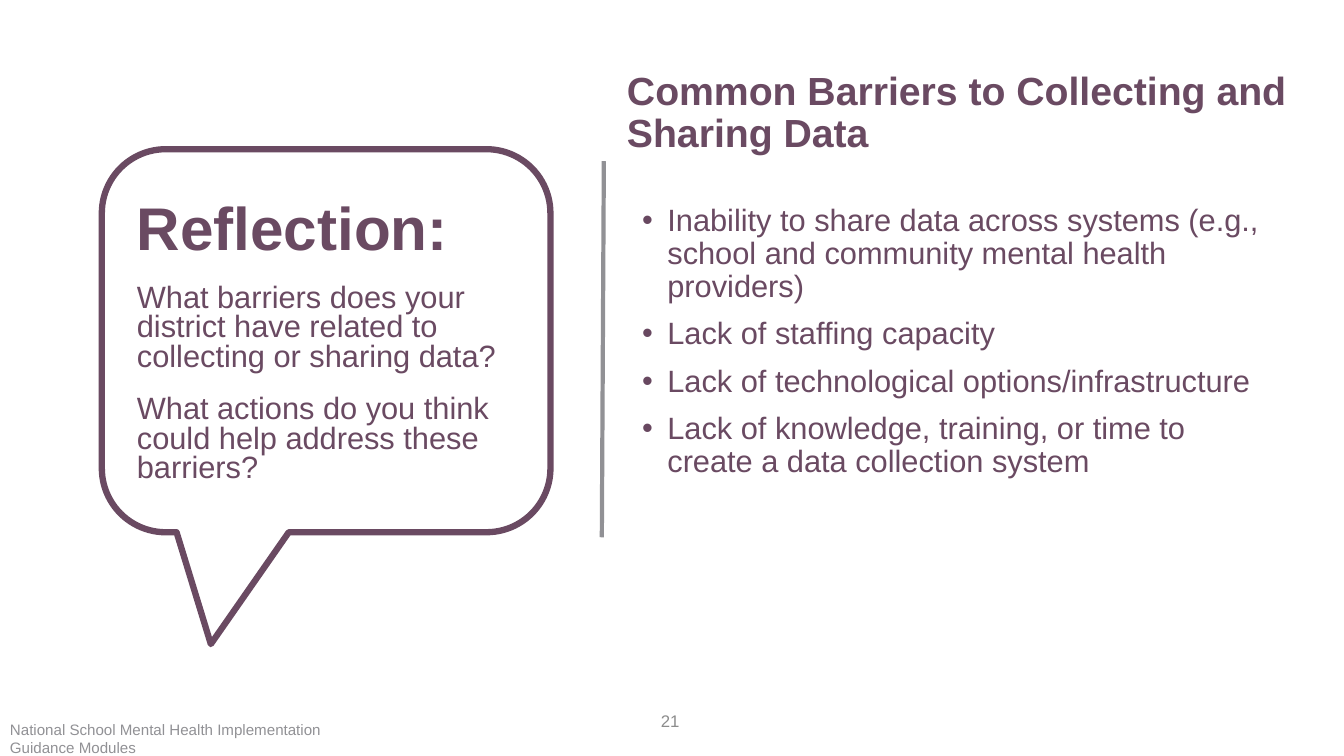
"""Build the slide on common barriers to collecting and sharing data."""
from lxml.etree import SubElement
from pptx import Presentation
from pptx.dml.color import RGBColor
from pptx.enum.shapes import MSO_CONNECTOR as Connector, MSO_SHAPE as Shape
from pptx.enum.text import MSO_ANCHOR as Anchor, MSO_AUTO_SIZE as AutoSize, PP_ALIGN as Align
from pptx.oxml.ns import qn
from pptx.util import Inches, Pt

PLUM = RGBColor(0x6A, 0x4A, 0x62)
BULLET = RGBColor(0x68, 0x48, 0x60)
GRAY = RGBColor(0x91, 0x91, 0x95)
PAGE_GRAY = RGBColor(0x8C, 0x8C, 0x8C)

presentation = Presentation()
presentation.slide_width = Inches(13.33)
presentation.slide_height = Inches(7.5)
slide = presentation.slides.add_slide(presentation.slide_layouts[1])
shapes = slide.shapes


def area(left, top, width, height):
    """Turn percentages of the slide into lengths."""
    across, down = presentation.slide_width / 100, presentation.slide_height / 100
    return [int(left * across), int(top * down), int(width * across), int(height * down)]


def write(shape, lines, color, anchor=Anchor.TOP, align=Align.LEFT, spacing=None, before=0, after=0):
    """Fill a shape with one paragraph for each (text, size, bold) line."""
    frame = shape.text_frame
    frame.word_wrap = True
    frame.auto_size = AutoSize.NONE
    frame.vertical_anchor = anchor
    for number, (text, size, bold) in enumerate(lines):
        paragraph = frame.add_paragraph() if number else frame.paragraphs[0]
        paragraph.alignment = align
        paragraph.line_spacing = spacing
        paragraph.space_before = Pt(before if number else 0)
        paragraph.space_after = Pt(after)
        run = paragraph.add_run()
        run.text = text
        run.font.name = "Arial"
        run.font.size = Pt(size)
        run.font.bold = bold
        run.font.color.rgb = color


title = shapes.title
title.left, title.top, title.width, title.height = area(45.9, 12.67, 51.53, 8.67)
write(title, [("Common Barriers to Collecting and Sharing Data", 28, True)],
      PLUM, anchor=Anchor.BOTTOM, spacing=0.9)

barriers = [
    "Inability to share data across systems (e.g., school and community mental health providers)",
    "Lack of staffing capacity",
    "Lack of technological options/infrastructure",
    "Lack of knowledge, training, or time to create a data collection system",
]
body = slide.placeholders[1]
body.left, body.top, body.width, body.height = area(47.03, 26.4, 47.55, 48.13)
write(body, [(barrier, 22, False) for barrier in barriers], PLUM, spacing=0.9, before=10)
for paragraph in body.text_frame.paragraphs:
    properties = paragraph._p.get_or_add_pPr()
    properties.set("marL", str(Inches(0.25)))
    properties.set("indent", str(-Inches(0.25)))
    bullet_color = SubElement(properties, qn("a:buClr"))
    SubElement(bullet_color, qn("a:srgbClr"), val=str(BULLET))
    SubElement(properties, qn("a:buFont"), typeface="Arial")
    SubElement(properties, qn("a:buChar"), char="•")

callout = shapes.add_shape(Shape.ROUNDED_RECTANGULAR_CALLOUT, *area(7.58, 19.73, 33.38, 50.67))
for index, adjustment in enumerate((-0.257, 0.792, 0.167)):
    callout.adjustments[index] = adjustment
callout.shadow.inherit = False
callout.fill.background()
callout.line.color.rgb = PLUM
callout.line.width = Pt(4.5)

reflection = shapes.add_textbox(*area(9.45, 26.4, 29.63, 39.6))
write(reflection, [
    ("Reflection:", 43, True),
    ("What barriers does your district have related to collecting or sharing data?", 22, False),
    ("What actions do you think could help address these barriers?", 22, False),
], PLUM, spacing=0.8, before=10, after=6)

divider = shapes.add_connector(Connector.STRAIGHT, *area(44.93, 21.33, 44.78, 71.07))
divider.line.color.rgb = GRAY
divider.line.width = Pt(3)
SubElement(divider._element.spPr, qn("a:effectLst"))

page_number = shapes.add_textbox(*area(28.8, 92.67, 22.5, 5.33))
write(page_number, [("21", 12, False)], PAGE_GRAY, anchor=Anchor.MIDDLE, align=Align.RIGHT)

footer = shapes.add_textbox(*area(0, 94.67, 28.58, 5.33))
write(footer, [("National School Mental Health Implementation Guidance Modules", 10.8, False)], GRAY)

presentation.save("out.pptx")
